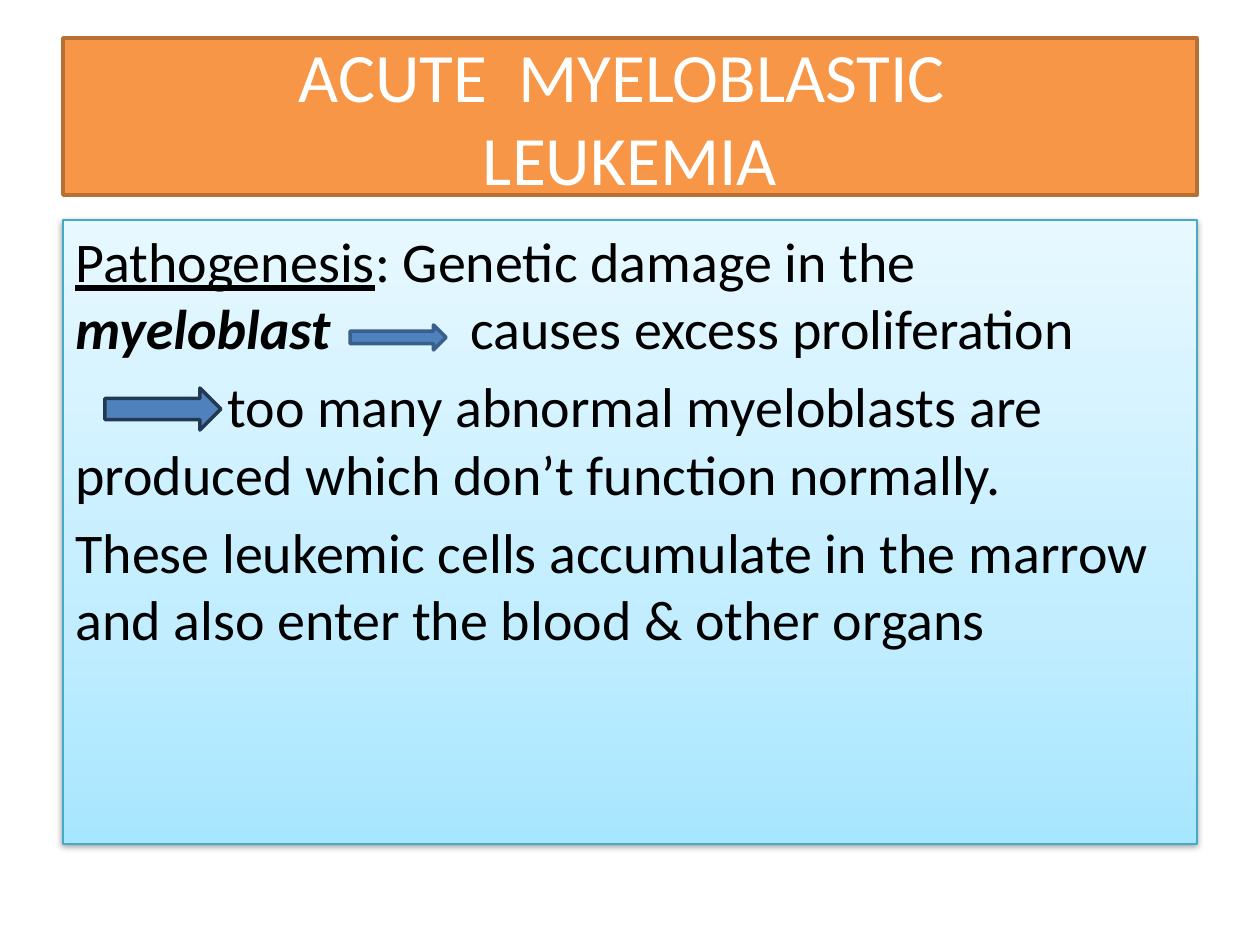
from lxml import etree
from pptx import Presentation
from pptx import util as u
from pptx.dml.color import RGBColor
from pptx.enum import shapes, text
from pptx.oxml import parse_xml
from pptx.oxml.ns import nsdecls, qn

COLORS = {
    "banner": "F79646", "banner_line": "B76F34", "banner_text": "FFFFFF",
    "panel_line": "46AAC5", "panel_text": "000000", "shadow": "000000",
    "arrow": "4F81BD", "small_arrow_line": "3A5F8C", "large_arrow_line": "233953",
}
PANEL_STOPS = [(0, "A7E6FF"), (35, "C1EDFF"), (100, "E7F8FF")]
FONT = "Calibri"


def px(length):
    return u.Emu(round(length * 914400 / 126))


def rgb(name):
    return RGBColor.from_string(COLORS[name])


def add_box(slide, kind, box, fill, line, line_width):
    shape = slide.shapes.add_shape(kind, *(px(length) for length in box))
    shape.shadow.inherit = False
    if fill:
        shape.fill.solid()
        shape.fill.fore_color.rgb = rgb(fill)
    shape.line.color.rgb = rgb(line)
    shape.line.width = u.Pt(line_width)
    return shape


def set_font(font, size, color):
    font.name = FONT
    font.size = u.Pt(size)
    font.color.rgb = rgb(color)


def add_title(slide, box):
    shape = add_box(slide, shapes.MSO_SHAPE.RECTANGLE, box, "banner", "banner_line", 2)
    frame = shape.text_frame
    frame.word_wrap = True
    frame.vertical_anchor = text.MSO_ANCHOR.MIDDLE
    frame.text = "ACUTE  MYELOBLASTIC \vLEUKEMIA"
    paragraph = frame.paragraphs[0]
    paragraph.alignment = text.PP_ALIGN.CENTER
    for run in paragraph.runs:
        set_font(run.font, 39.6, "banner_text")


def style_panel(shape):
    """Give the panel its three-stop gradient and soft shadow."""
    shape.fill.gradient()
    shape.fill.gradient_angle = 90
    properties = shape._element.spPr
    stops = properties.find(qn("a:gradFill")).find(qn("a:gsLst"))
    for stop in list(stops):
        stops.remove(stop)
    for position, color in PANEL_STOPS:
        stop = etree.SubElement(stops, qn("a:gs"), pos=str(position * 1000))
        etree.SubElement(stop, qn("a:srgbClr"), val=color)
    effects = properties.find(qn("a:effectLst"))
    effects.append(parse_xml(
        f'<a:outerShdw {nsdecls("a")} blurRad="{u.Pt(3.1)}" dist="{u.Pt(1.6)}" '
        f'dir="5400000" rotWithShape="0"><a:srgbClr val="{COLORS["shadow"]}">'
        '<a:alpha val="38000"/></a:srgbClr></a:outerShdw>'))


def add_tab_stop(paragraph, position):
    tabs = etree.SubElement(paragraph._p.get_or_add_pPr(), qn("a:tabLst"))
    etree.SubElement(tabs, qn("a:tab"), pos=str(px(position)), algn="l")


def add_pathogenesis(slide, box):
    shape = add_box(slide, shapes.MSO_SHAPE.RECTANGLE, box, None, "panel_line", 0.75)
    style_panel(shape)
    frame = shape.text_frame
    frame.word_wrap = True
    frame.vertical_anchor = text.MSO_ANCHOR.TOP
    frame.text = (
        "\n"
        "too many abnormal myeloblasts are produced which don’t function normally.\n"
        "These leukemic cells accumulate in the marrow and also enter the blood & other organs")
    cause, effect, spread = frame.paragraphs

    add_tab_stop(cause, 395)
    heading, damage = cause.add_run(), cause.add_run()
    cause.add_line_break()
    cell, result = cause.add_run(), cause.add_run()
    heading.text = "Pathogenesis"
    heading.font.underline = True
    damage.text = ": Genetic damage in the"
    cell.text = "myeloblast"
    cell.font.bold = cell.font.italic = True
    result.text = "\tcauses excess proliferation"

    effect._p.get_or_add_pPr().set("indent", str(px(152)))
    for paragraph in (effect, spread):
        paragraph.space_before = u.Pt(6.4)
    for paragraph in frame.paragraphs:
        paragraph.alignment = text.PP_ALIGN.LEFT
        for run in paragraph.runs:
            set_font(run.font, 32, "panel_text")

    left, top = box[:2]
    for offset_x, offset_y, width, height, line in (
            (287, 105, 96, 25, "small_arrow_line"),
            (42, 168, 116, 42, "large_arrow_line")):
        add_box(slide, shapes.MSO_SHAPE.RIGHT_ARROW,
                (left + offset_x, top + offset_y, width, height), "arrow", line, 2)


def main():
    presentation = Presentation()
    presentation.slide_width, presentation.slide_height = px(1260), px(945)
    slide = presentation.slides.add_slide(presentation.slide_layouts[6])
    add_title(slide, (63, 38, 1134, 157))
    add_pathogenesis(slide, (63, 220, 1134, 624))
    presentation.save("out.pptx")


if __name__ == "__main__":
    main()
